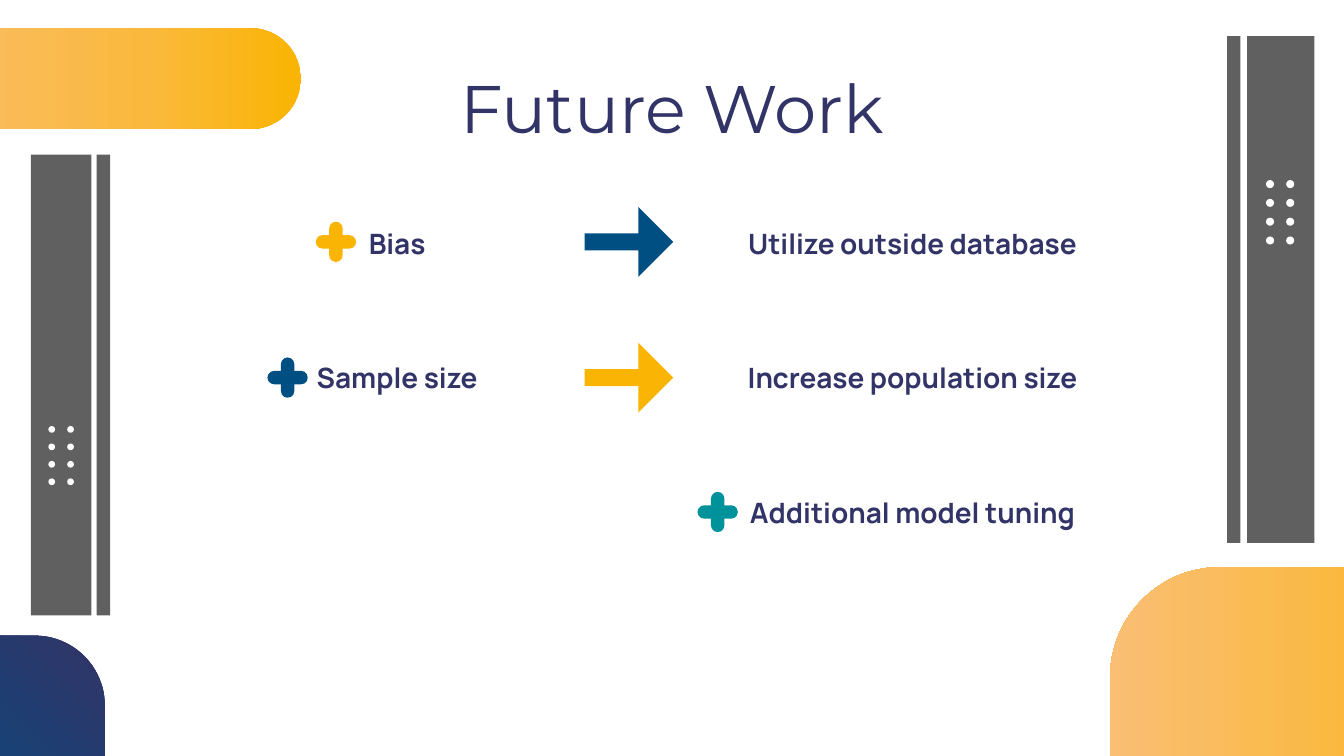
from copy import deepcopy
from dataclasses import dataclass
from itertools import product

from pptx import Presentation
from pptx.dml.color import RGBColor
from pptx.enum.shapes import MSO_SHAPE as Preset
from pptx.enum.text import MSO_ANCHOR as Anchor, PP_ALIGN as Align
from pptx.oxml.ns import qn
from pptx.util import Inches, Pt

COLORS = {
    "navy": "323366",
    "indigo": "194175",
    "blue": "004F83",
    "teal": "00929B",
    "gold": "FAB403",
    "amber": "FAB93C",
    "peach": "FABE75",
    "gray": "606060",
    "white": "FFFFFF",
}


@dataclass(frozen=True)
class Box:
    left: float
    top: float
    width: float
    height: float

    def lengths(self) -> tuple:
        return tuple(Inches(n) for n in (self.left, self.top, self.width, self.height))


@dataclass(frozen=True)
class Blob:
    preset: Preset
    box: Box
    adjustments: tuple
    stops: tuple
    angle: int


@dataclass(frozen=True)
class Marker:
    center_x: float
    center_y: float
    color: str


@dataclass(frozen=True)
class DotGrid:
    left: float
    top: float
    column_gap: float
    row_gap: float
    diameter: float


GOLD_STOPS = (("gold", 0), ("amber", 0.34), ("peach", 1))
NAVY_STOPS = (("navy", 0), ("indigo", 0.63), ("blue", 1))

BLOBS = [
    Blob(Preset.ROUND_2_DIAG_RECTANGLE, Box(8.26, 4.22, 2.76, 1.64), (0.5, 0), GOLD_STOPS, 180),
    Blob(Preset.ROUNDED_RECTANGLE, Box(-1.05, 0.21, 3.29, 0.75), (0.5,), GOLD_STOPS, 180),
    Blob(Preset.ROUND_1_RECTANGLE, Box(-0.26, 4.73, 1.04, 1.53), (0.5,), NAVY_STOPS, 225),
]
BARS = [
    Box(9.28, 0.27, 0.5, 3.77),
    Box(9.13, 0.27, 0.1, 3.77),
    Box(0.23, 1.15, 0.45, 3.43),
    Box(0.72, 1.15, 0.1, 3.43),
]
DOT_GRIDS = [
    DotGrid(9.42, 1.34, 0.15, 0.14, 0.06),
    DotGrid(0.36, 3.17, 0.14, 0.13, 0.05),
]
PLUSES = [
    Marker(2.5, 1.8, "gold"),
    Marker(2.14, 2.81, "blue"),
    Marker(5.34, 3.81, "teal"),
]
ARROWS = [Marker(4.68, 1.8, "blue"), Marker(4.68, 2.81, "gold")]


def add_shape(page, preset: Preset, box: Box, color: str, adjustments: tuple = ()):
    shape = page.shapes.add_shape(preset, *box.lengths())
    shape.shadow.inherit = False
    shape.line.fill.background()
    shape.fill.solid()
    shape.fill.fore_color.rgb = RGBColor.from_string(COLORS[color])
    for index, value in enumerate(adjustments):
        shape.adjustments[index] = value
    return shape


def add_blob(page, blob: Blob) -> None:
    shape = add_shape(page, blob.preset, blob.box, blob.stops[0][0], blob.adjustments)
    shape.fill.gradient()
    shape.fill.gradient_angle = blob.angle
    stop_list = shape._element.spPr.find(qn("a:gradFill")).find(qn("a:gsLst"))
    stop_list.append(deepcopy(stop_list[-1]))
    for stop, (color, position) in zip(shape.fill.gradient_stops, blob.stops):
        stop.color.rgb = RGBColor.from_string(COLORS[color])
        stop.position = position


def add_dots(page, grid: DotGrid) -> None:
    for column, row in product(range(2), range(4)):
        left = grid.left + column * grid.column_gap
        top = grid.top + row * grid.row_gap
        add_shape(page, Preset.OVAL, Box(left, top, grid.diameter, grid.diameter), "white")


def add_centered(page, preset: Preset, marker: Marker, width: float, height: float,
                 adjustments: tuple) -> None:
    box = Box(marker.center_x - width / 2, marker.center_y - height / 2, width, height)
    add_shape(page, preset, box, marker.color, adjustments)


def add_plus(page, marker: Marker) -> None:
    for width, height in ((0.1, 0.3), (0.3, 0.1)):
        add_centered(page, Preset.ROUNDED_RECTANGLE, marker, width, height, (0.5,))


def add_text(page, box: Box, lines: list, *, font: str, size: float, bold: bool = False,
             anchor: Anchor = Anchor.MIDDLE, gap: float = 0) -> None:
    frame = page.shapes.add_textbox(*box.lengths()).text_frame
    frame.word_wrap = True
    frame.vertical_anchor = anchor
    frame.margin_left = frame.margin_right = Inches(0.1)
    frame.margin_top = frame.margin_bottom = Inches(0.1)
    for index, line in enumerate(lines):
        para = frame.add_paragraph() if index else frame.paragraphs[0]
        para.alignment = Align.CENTER
        para.space_before = Pt(gap if index else 0)
        span = para.add_run()
        span.text = line
        span.font.name = font
        span.font.size = Pt(size)
        span.font.bold = bold
        span.font.color.rgb = RGBColor.from_string(COLORS["navy"])


def main() -> None:
    deck = Presentation()
    deck.slide_width = Inches(10)
    deck.slide_height = deck.slide_width * 9 // 16
    page = deck.slides.add_slide(deck.slide_layouts[6])

    for blob in BLOBS:
        add_blob(page, blob)
    for bar in BARS:
        add_shape(page, Preset.RECTANGLE, bar, "gray")
    for grid in DOT_GRIDS:
        add_dots(page, grid)
    for plus in PLUSES:
        add_plus(page, plus)
    for arrow in ARROWS:
        add_centered(page, Preset.RIGHT_ARROW, arrow, 0.66, 0.52, (0.24, 0.5))

    add_text(page, Box(0.78, 0.39, 8.44, 0.63), ["Future Work"],
             font="Montserrat", size=36, anchor=Anchor.TOP)
    body = dict(font="Manrope", size=15, bold=True, gap=54)
    add_text(page, Box(1.81, 1.61, 2.29, 1.4), ["Bias", "Sample size"], **body)
    add_text(page, Box(5.25, 1.68, 3.08, 2.26),
             ["Utilize outside database", "Increase population size", "Additional model tuning"],
             **body)

    deck.save("out.pptx")


if __name__ == "__main__":
    main()
